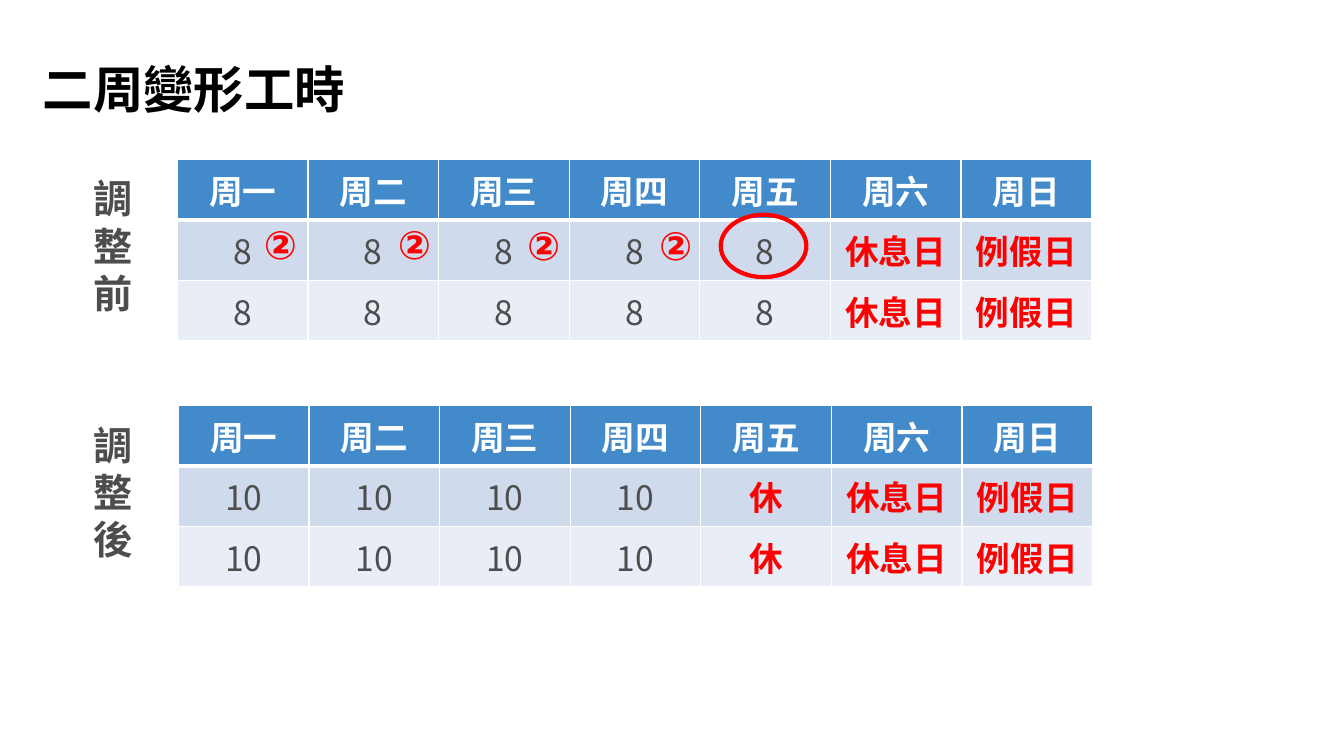
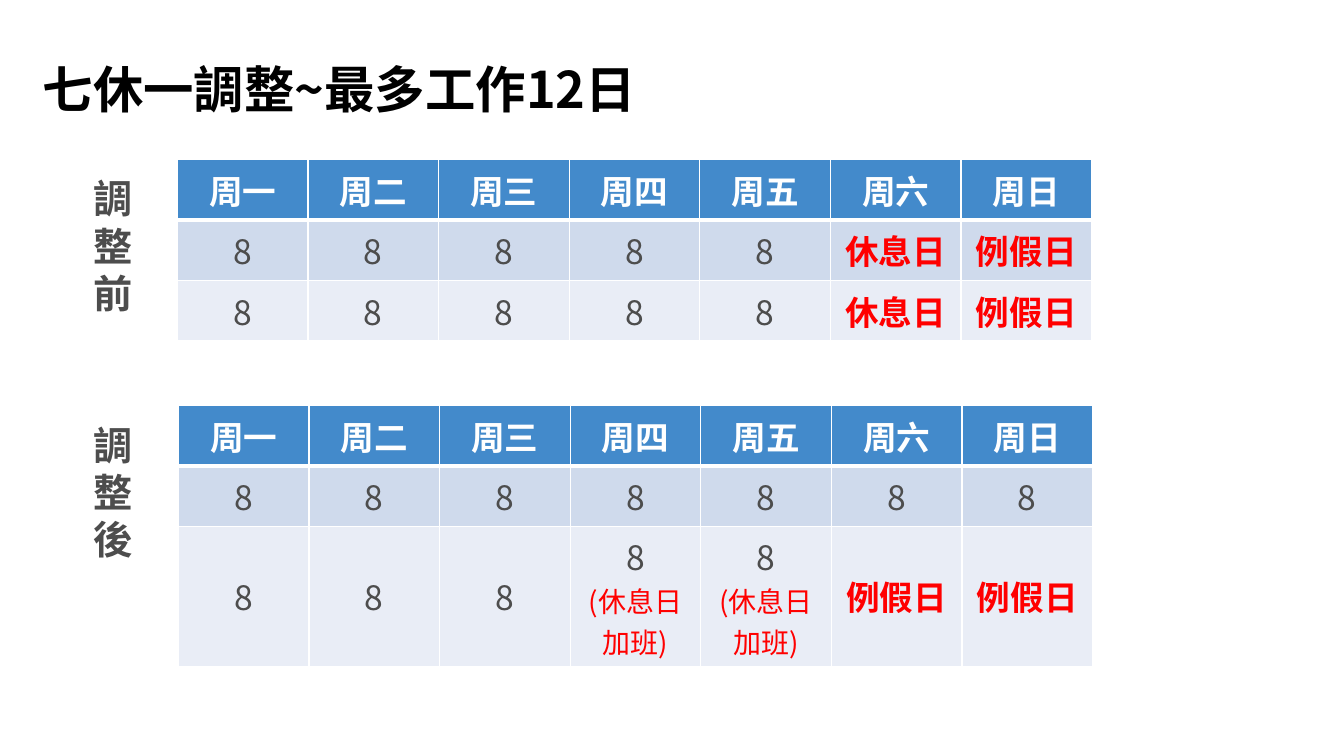
import pptx
import pptx.dml.color
import pptx.enum.shapes
import pptx.enum.text
import pptx.oxml
import pptx.oxml.ns
import pptx.util

Pt = pptx.util.Pt
ANCHOR = pptx.enum.text.MSO_ANCHOR
ALIGN = pptx.enum.text.PP_ALIGN
FIT = pptx.enum.text.MSO_AUTO_SIZE

FONT = "Noto Sans CJK SC"
SYMBOL_FONT = "DejaVu Sans"
BLACK, WHITE, GREY, RED = "000000", "FFFFFF", "4D4D4D", "FF0000"
HEADER_FILL, BAND_FILLS = "438ACB", ("CFDAEC", "E9EDF6")

DAYS = ["周一", "周二", "周三", "周四", "周五", "周六", "周日"]
REST, HOLIDAY = "休息日", "例假日"
NORMAL_WEEK = ["8"] * 5 + [REST, HOLIDAY]
LONG_WEEK = ["10"] * 4 + ["休", REST, HOLIDAY]
OVERTIME = "8\n(休息日加班)"

COLUMN_WIDTH, ROW_HEIGHT, OVERTIME_HEIGHT = 93.3, 43.2, 100


def color(value):
    return pptx.dml.color.RGBColor.from_string(value)


def write(para, text, size=24, fill=GREY, bold=False, font=FONT, align=ALIGN.LEFT):
    """Add formatted text to a paragraph, with one font for every script."""
    para.alignment = align
    span = para.add_run()
    span.text = text
    span.font.size = Pt(size)
    span.font.bold = bold
    span.font.color.rgb = color(fill)
    span.font.name = font
    east_asian = pptx.oxml.parse_xml(
        f'<a:ea {pptx.oxml.ns.nsdecls("a")} typeface="{font}"/>')
    span.font._element.append(east_asian)


class Slides:
    def __init__(self):
        self.deck = pptx.Presentation()
        self.deck.slide_width, self.deck.slide_height = Pt(960), Pt(540)
        self.page = None

    def start(self, title):
        self.page = self.deck.slides.add_slide(self.deck.slide_layouts[5])
        box = self.page.shapes.title
        box.left, box.top, box.width, box.height = Pt(26), Pt(39.6), Pt(891), Pt(46.8)
        frame = box.text_frame
        frame.vertical_anchor = ANCHOR.MIDDLE
        frame.auto_size = FIT.NONE
        frame.margin_left = frame.margin_top = frame.margin_bottom = Pt(4.5)
        frame.margin_right = Pt(7.2)
        write(frame.paragraphs[0], title, size=36, fill=BLACK, bold=True)

    def text(self, text, left, top, width, height, wrap=True, **style):
        box = self.page.shapes.add_textbox(Pt(left), Pt(top), Pt(width), Pt(height))
        frame = box.text_frame
        frame.word_wrap = wrap
        frame.auto_size = FIT.SHAPE_TO_FIT_TEXT
        write(frame.paragraphs[0], text, size=28, bold=True, **style)

    def ring(self, left, top, width, height):
        ring = self.page.shapes.add_shape(
            pptx.enum.shapes.MSO_SHAPE.OVAL, Pt(left), Pt(top), Pt(width), Pt(height))
        ring.shadow.inherit = False
        ring.fill.background()
        ring.line.color.rgb = color(RED)
        ring.line.width = Pt(3)

    def borders(self, cell, top, bottom):
        properties = cell._tc.get_or_add_tcPr()
        for side, width in (("L", 1), ("R", 1), ("T", top), ("B", bottom)):
            properties.append(pptx.oxml.parse_xml(
                f'<a:ln{side} {pptx.oxml.ns.nsdecls("a")} w="{Pt(width)}">'
                f'<a:solidFill><a:srgbClr val="{WHITE}"/></a:solidFill></a:ln{side}>'))

    def cell(self, cell, text, row):
        cell.vertical_anchor = ANCHOR.MIDDLE
        self.borders(cell, top=3 if row == 1 else 1, bottom=3 if row == 0 else 1)
        cell.fill.solid()
        cell.fill.fore_color.rgb = color(BAND_FILLS[row - 1] if row else HEADER_FILL)
        frame = cell.text_frame
        for index, line in enumerate(text.split("\n")):
            para = frame.add_paragraph() if index else frame.paragraphs[0]
            if row == 0:
                style = {"fill": WHITE, "bold": True}
            elif line.isdigit():
                style = {}
            elif index:
                style = {"fill": RED, "size": 20}
            else:
                style = {"fill": RED, "bold": True}
            write(para, line, align=ALIGN.CENTER, **style)

    def schedule(self, label, weeks, left, top):
        """Draw a two-week table with its label on the left."""
        rows = [DAYS] + weeks
        heights = [OVERTIME_HEIGHT if OVERTIME in texts else ROW_HEIGHT for texts in rows]
        table = self.page.shapes.add_table(
            len(rows), len(DAYS), Pt(left), Pt(top),
            Pt(COLUMN_WIDTH * len(DAYS)), Pt(sum(heights))).table
        table.horz_banding = False
        for column in table.columns:
            column.width = Pt(COLUMN_WIDTH)
        for row, texts in enumerate(rows):
            table.rows[row].height = Pt(heights[row])
            for column, text in enumerate(texts):
                self.cell(table.cell(row, column), text, row)
        self.text(label, 59.8, top + 7.5, 59, 108.7)

    def compare(self, title, after):
        """Start a slide with the schedules before and after the change."""
        self.start(title)
        self.schedule("調整前", [NORMAL_WEEK] * 2, 126.7, 113.8)
        self.schedule("調整後", after, 127.4, 289.6)


def main():
    slides = Slides()

    # Two-week flexible hours: Friday is spread over four days
    slides.compare("二周變形工時", [LONG_WEEK] * 2)
    slides.ring(514.8, 153.4, 61.2, 44.6)
    for left, top in ((181.4, 154.1), (277.2, 154.1), (369.4, 154.8), (463.7, 154.8)):
        slides.text("②", left, top, 42.5, 41, wrap=False, fill=RED, font=SYMBOL_FONT)

    # Moved rest days: twelve working days in a row
    slides.compare("七休一調整~最多工作12日",
                   [["8"] * 7, ["8"] * 3 + [OVERTIME] * 2 + [HOLIDAY] * 2])

    slides.deck.save("out.pptx")


if __name__ == "__main__":
    main()
